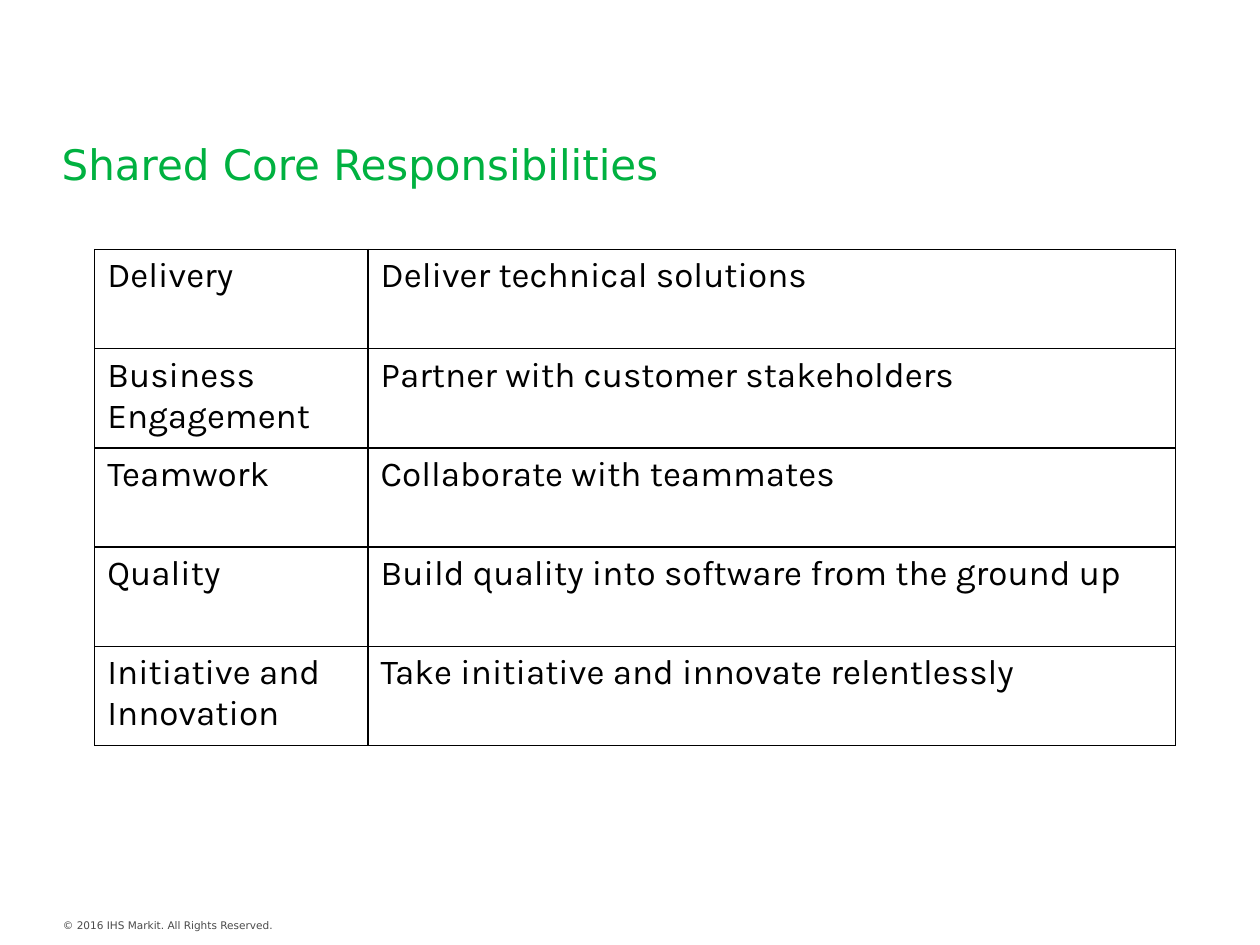
from lxml import etree
from pptx import Presentation
from pptx.dml.color import RGBColor
from pptx.enum.text import MSO_ANCHOR, MSO_AUTO_SIZE, PP_ALIGN
from pptx.oxml.ns import qn
from pptx.util import Cm, Pt

LEFT = PP_ALIGN.LEFT
MIDDLE = MSO_ANCHOR.MIDDLE
TOP = MSO_ANCHOR.TOP
NO_AUTOFIT = MSO_AUTO_SIZE.NONE
TITLE_ONLY = 5

THEME = {
    "title": {"name": "DejaVu Sans", "size": Pt(24), "color": RGBColor(0x00, 0xB1, 0x40)},
    "table": {"name": "Karla", "size": Pt(20), "color": RGBColor(0x00, 0x00, 0x00)},
    "footer": {"name": "DejaVu Sans", "size": Pt(6), "color": RGBColor(0x4B, 0x4B, 0x4B)},
    "border": {"color": "000000", "width": Pt(1)},
}

RESPONSIBILITIES = [
    ("Delivery", "Deliver technical solutions"),
    ("Business Engagement", "Partner with customer stakeholders"),
    ("Teamwork", "Collaborate with teammates"),
    ("Quality", "Build quality into software from the ground up"),
    ("Initiative and Innovation", "Take initiative and innovate relentlessly"),
]


def write(frame, text, style, **layout):
    """Fill a text frame with one left-aligned paragraph in a theme style."""
    for name, value in layout.items():
        setattr(frame, name, value)
    para = frame.paragraphs[0]
    para.alignment = LEFT
    span = para.add_run()
    span.text = text
    for name, value in THEME[style].items():
        if name == "color":
            span.font.color.rgb = value
        else:
            setattr(span.font, name, value)


def draw_borders(cell):
    properties = cell._tc.get_or_add_tcPr()
    for position, side in enumerate(("a:lnL", "a:lnR", "a:lnT", "a:lnB")):
        line = etree.Element(qn(side), w=str(THEME["border"]["width"]))
        fill = etree.SubElement(line, qn("a:solidFill"))
        etree.SubElement(fill, qn("a:srgbClr"), val=THEME["border"]["color"])
        properties.insert(position, line)


deck = Presentation()
deck.slide_width, deck.slide_height = Cm(25.4), Cm(19.05)
page = deck.slides.add_slide(deck.slide_layouts[TITLE_ONLY])

# Title
title = page.shapes.title
title.left, title.top, title.width, title.height = Cm(0.99), Cm(2.67), Cm(23.5), Cm(1.27)
write(title.text_frame, "Shared Core Responsibilities", "title",
      word_wrap=True, auto_size=NO_AUTOFIT, vertical_anchor=MIDDLE)

# Responsibilities table
column_widths = [Cm(5.51), Cm(16.28)]
row_height = Cm(2)
table = page.shapes.add_table(
    len(RESPONSIBILITIES), len(column_widths), Cm(1.91), Cm(5.03),
    sum(column_widths), row_height * len(RESPONSIBILITIES)).table
table.first_row = table.horz_banding = False
for column, width in zip(table.columns, column_widths):
    column.width = width
for row, texts in zip(table.rows, RESPONSIBILITIES):
    row.height = row_height
    for cell, text in zip(row.cells, texts):
        cell.fill.background()
        cell.vertical_anchor = TOP
        draw_borders(cell)
        write(cell.text_frame, text, "table")

# Copyright line
footer = page.shapes.add_textbox(Cm(1.02), Cm(18.39), Cm(4.88), Cm(0.51))
write(footer.text_frame, "© 2016 IHS Markit. All Rights Reserved.", "footer",
      word_wrap=False, auto_size=NO_AUTOFIT, vertical_anchor=MIDDLE)

deck.save("out.pptx")
